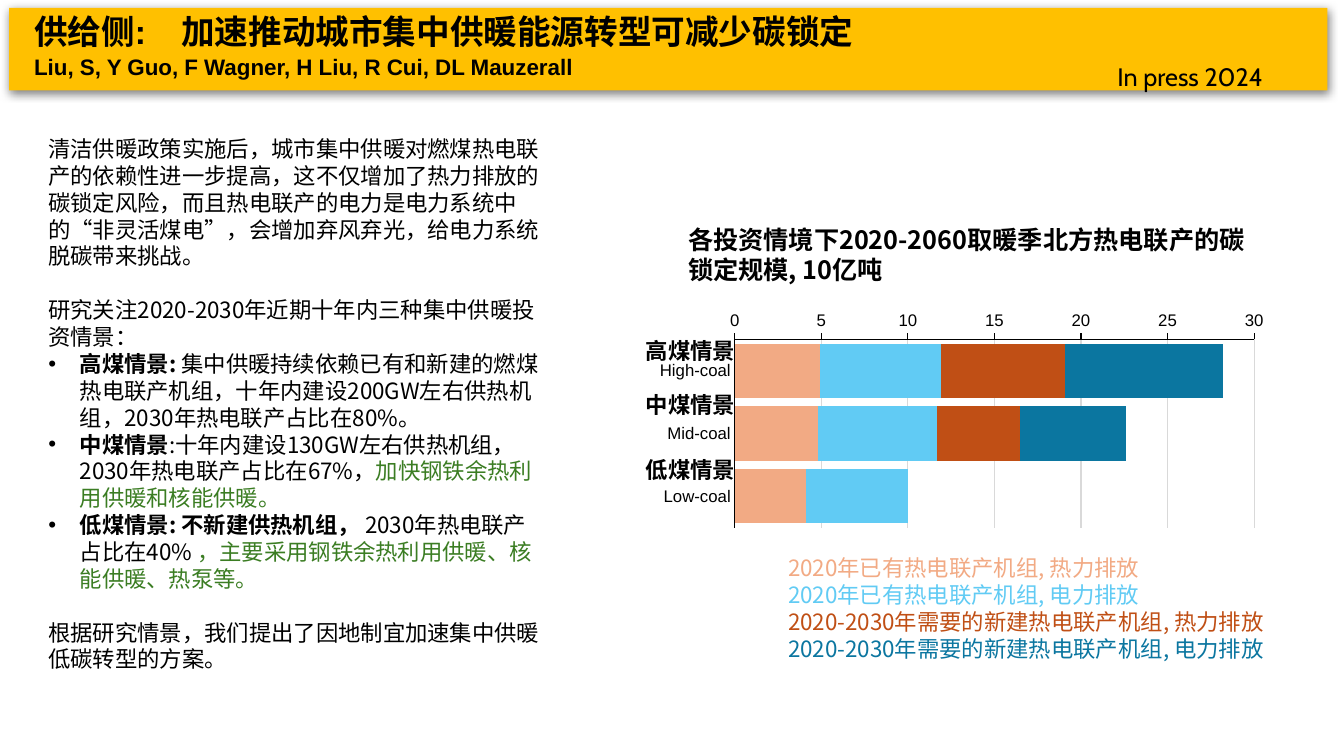
from lxml.etree import SubElement
from pptx import Presentation
from pptx.chart.data import CategoryChartData as ChartData
from pptx.dml.color import RGBColor
from pptx.enum.chart import XL_CHART_TYPE as Kind, XL_TICK_MARK as Tick
from pptx.enum.shapes import MSO_SHAPE as Shape
from pptx.oxml import parse_xml
from pptx.oxml.ns import nsdecls, qn
from pptx.util import Cm, Pt

BLACK = RGBColor(0x00, 0x00, 0x00)
GOLD = RGBColor(0xFF, 0xC0, 0x00)
GREEN = RGBColor(0x3B, 0x7D, 0x23)
GREY = RGBColor(0xD9, 0xD9, 0xD9)
PEACH = RGBColor(0xF2, 0xAA, 0x84)
SKY = RGBColor(0x61, 0xCB, 0xF4)
RUST = RGBColor(0xC0, 0x4F, 0x15)
TEAL = RGBColor(0x0B, 0x76, 0xA0)
NOTO = "Noto Sans CJK SC"
LINE = 19.2

SERIES = [
    (PEACH, [4.9, 4.8, 4.1], "2020年已有热电联产机组, 热力排放"),
    (SKY, [7, 6.9, 5.9], "2020年已有热电联产机组, 电力排放"),
    (RUST, [7.2, 4.8, 0], "2020-2030年需要的新建热电联产机组, 热力排放"),
    (TEAL, [9.1, 6.1, 0], "2020-2030年需要的新建热电联产机组, 电力排放"),
]
TAGS = [("高煤情景", 8.38), ("中煤情景", 9.73), ("低煤情景", 11.38)]
BODY = [
    dict(runs=[("清洁供暖政策实施后，城市集中供暖对燃煤热电联产的依赖性进一步提高，"
                "这不仅增加了热力排放的碳锁定风险，而且热电联产的电力是电力系统中的"
                "“非灵活煤电”，会增加弃风弃光，给电力系统脱碳带来挑战。", {})]),
    dict(runs=[("研究关注2020-2030年近期十年内三种集中供暖投资情景：", {})], before=LINE),
    dict(runs=[("高煤情景: ", dict(bold=True)),
               ("集中供暖持续依赖已有和新建的燃煤热电联产机组，十年内建设200GW左右"
                "供热机组，2030年热电联产占比在80%。", {})], bullet=True),
    dict(runs=[("中煤情景", dict(bold=True)),
               (":十年内建设130GW左右供热机组，2030年热电联产占比在67%，", {}),
               ("加快钢铁余热利用供暖和核能供暖。", dict(color=GREEN))], bullet=True),
    dict(runs=[("低煤情景: 不新建供热机组，", dict(bold=True)),
               (" 2030年热电联产占比在40% ", {}),
               ("，主要采用钢铁余热利用供暖、核能供暖、热泵等。", dict(color=GREEN))],
         bullet=True),
    dict(runs=[("根据研究情景，我们提出了因地制宜加速集中供暖低碳转型的方案。", {})],
         before=LINE),
]


def style(font, size, color=BLACK, bold=False, face="Arial"):
    font.size, font.bold, font.name = Pt(size), bold, face
    font.color.rgb = color


def write(para, text, size=16, color=BLACK, bold=False, face=NOTO):
    run = para.add_run()
    run.text = text
    style(run.font, size, color, bold, face)
    if face != "Cabin":
        SubElement(run.font._element, qn("a:ea")).set("typeface", NOTO)


def fill_para(para, runs, before=0, bullet=False, tab=None, pitch=LINE, **form):
    props = para._p.get_or_add_pPr()
    if bullet:
        props.set("marL", str(Cm(0.79)))
        props.set("indent", str(-Cm(0.79)))
        SubElement(props, qn("a:buFont")).set("typeface", "Arial")
        SubElement(props, qn("a:buChar")).set("char", "•")
    if tab:
        stops = SubElement(props, qn("a:tabLst"))
        stop = SubElement(stops, qn("a:tab"))
        stop.set("pos", str(tab))
        stop.set("algn", "l")
    if pitch:
        para.line_spacing = Pt(pitch)
    if before:
        para.space_before = Pt(before)
    for text, extra in runs:
        write(para, text, **{**form, **extra})


def add_text(slide, paras, left, top, width, height, wrap=True, **form):
    box = slide.shapes.add_textbox(Cm(left), Cm(top), Cm(width), Cm(height))
    frame = box.text_frame
    frame.word_wrap = wrap
    if isinstance(paras, str):
        paras = [dict(runs=[(paras, {})])]
    for i, item in enumerate(paras):
        para = frame.add_paragraph() if i else frame.paragraphs[0]
        fill_para(para, **{**form, **item})


def add_band(slide):
    band = slide.shapes.add_shape(Shape.RECTANGLE, Cm(0.23), Cm(0.2), Cm(33.22), Cm(2.08))
    band.fill.solid()
    band.fill.fore_color.rgb = GOLD
    band.line.fill.background()
    band._element.spPr.append(parse_xml(
        f'<a:effectLst {nsdecls("a")}><a:outerShdw blurRad="{Pt(7)}" dist="{Pt(2)}" '
        'dir="5400000" algn="t" rotWithShape="0"><a:srgbClr val="000000">'
        '<a:alpha val="50000"/></a:srgbClr></a:outerShdw></a:effectLst>'))


def set_axis(axis, tick):
    axis.major_tick_mark, axis.minor_tick_mark = tick, Tick.NONE
    style(axis.tick_labels.font, 12)
    axis.format.line.color.rgb = BLACK
    axis.format.line.width = Pt(0.75)


def set_plot(chart, x, y, w, h):
    area = chart.element.find(".//" + qn("c:plotArea"))
    for old in area.findall(qn("c:layout")):
        area.remove(old)
    layout = parse_xml(f'<c:layout {nsdecls("c")}><c:manualLayout/></c:layout>')
    pairs = [("layoutTarget", "inner"), ("xMode", "edge"), ("yMode", "edge"),
             ("x", x), ("y", y), ("w", w), ("h", h)]
    for name, value in pairs:
        SubElement(layout[0], qn("c:" + name)).set("val", str(value))
    area.insert(0, layout)


def add_bars(slide):
    data = ChartData()
    data.categories = ["High-coal", "Mid-coal", "Low-coal"]
    for i, (_, values, _) in enumerate(SERIES, 1):
        data.add_series(f"Series {i}", values)
    chart = slide.shapes.add_chart(Kind.BAR_STACKED, Cm(16.31), Cm(7.75),
                                   Cm(15.77), Cm(5.72), data).chart
    chart.has_legend = chart.has_title = False
    style(chart.font, 10)
    plot = chart.plots[0]
    plot.gap_width, plot.overlap, plot.vary_by_categories = 16, 100, False
    for series, (color, _, _) in zip(plot.series, SERIES):
        series.format.fill.solid()
        series.format.fill.fore_color.rgb = color
    set_axis(chart.category_axis, Tick.NONE)
    chart.category_axis.reverse_order = True
    scale = chart.value_axis
    set_axis(scale, Tick.OUTSIDE)
    scale.minimum_scale, scale.maximum_scale, scale.major_unit = 0, 30, 5
    scale.major_gridlines.format.line.color.rgb = GREY
    scale.major_gridlines.format.line.width = Pt(0.75)
    set_plot(chart, 0.14, 0.14, 0.83, 0.83)


def main():
    deck = Presentation()
    deck.slide_width, deck.slide_height = Cm(33.87), Cm(19.05)
    slide = deck.slides.add_slide(deck.slide_layouts[6])
    add_band(slide)
    title = [
        dict(runs=[("供给侧:\t加速推动城市集中供暖能源转型可减少碳锁定", {})],
             size=24, pitch=29, tab=Cm(3.71)),
        dict(runs=[("Liu, S, Y Guo, F Wagner, H Liu, R Cui, DL Mauzerall", {})], pitch=20),
    ]
    add_text(slide, title, 0.61, 0.15, 25.04, 1.96, bold=True, face="Arial")
    add_text(slide, BODY, 0.97, 3.28, 12.98, 13.94)
    add_bars(slide)
    add_text(slide, "各投资情境下2020-2060取暖季北方热电联产的碳锁定规模, 10亿吨",
             17.09, 5.54, 14.99, 1.8, size=18, bold=True, pitch=21.5)
    keys = [dict(runs=[(label, dict(color=color))]) for color, _, label in SERIES]
    add_text(slide, keys, 19.61, 13.84, 13.49, 3)
    add_text(slide, "In press 2024", 27.91, 1.42, 4.19, 1.02, wrap=False,
             size=18, face="Cabin", pitch=None)
    for label, top in TAGS:
        add_text(slide, label, 16.03, top, 3.28, 0.94, bold=True)
    deck.save("out.pptx")


if __name__ == "__main__":
    main()
